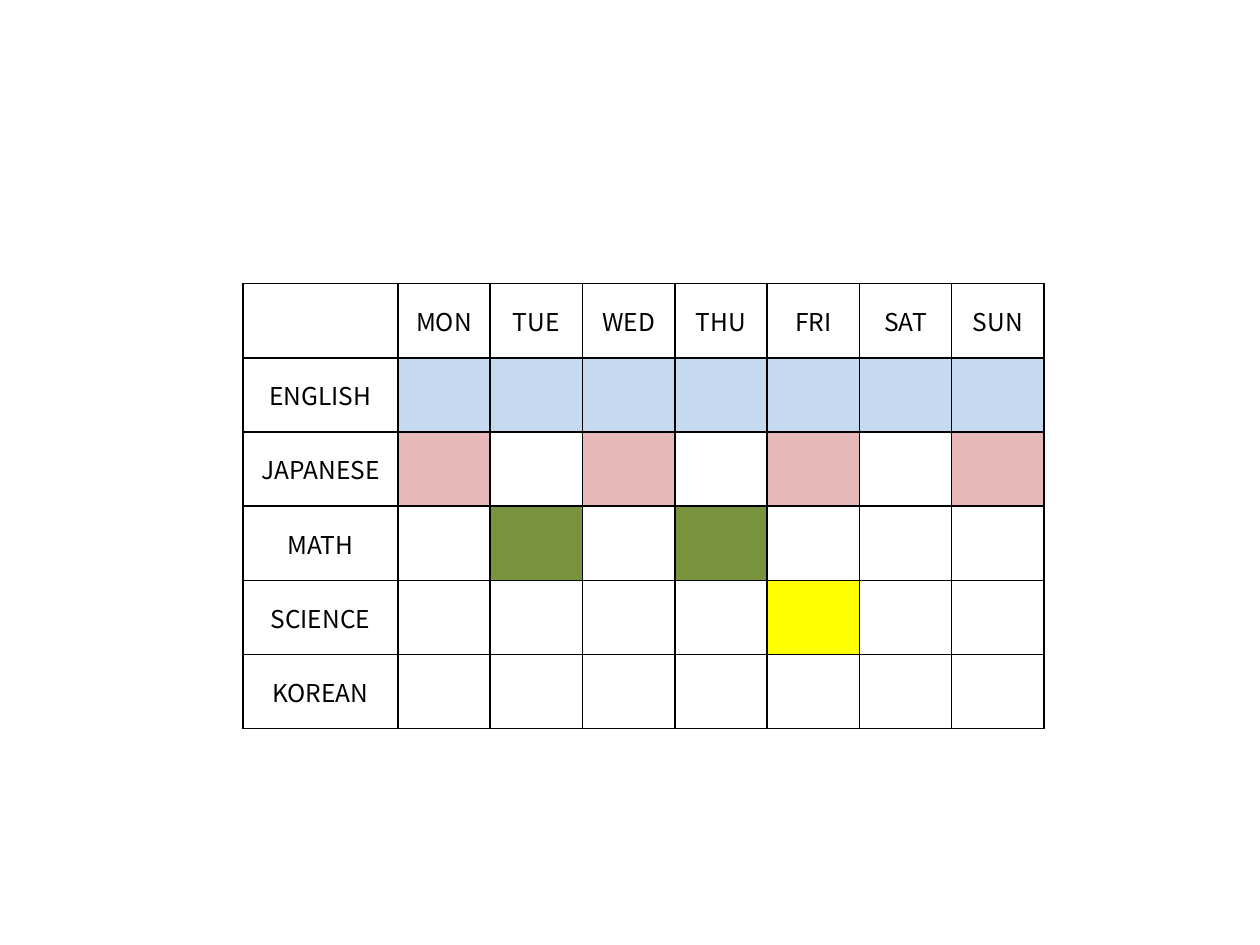
from dataclasses import dataclass

from lxml.etree import SubElement
from pptx import Presentation
from pptx.dml.color import RGBColor
from pptx.enum.text import MSO_ANCHOR, PP_ALIGN
from pptx.oxml.ns import qn
from pptx.util import Cm, Pt


@dataclass(frozen=True)
class Theme:
    """Colours, font and sizes of the timetable."""

    ink: str = "000000"
    english: str = "C6D9F1"
    japanese: str = "E6B9B8"
    math: str = "77933C"
    science: str = "FFFF00"
    font: str = "Noto Sans CJK KR"
    label_size: int = 14
    border_width: int = 1


THEME = Theme()
DAYS = ["MON", "TUE", "WED", "THU", "FRI", "SAT", "SUN"]
LESSONS = {
    "ENGLISH": (THEME.english, DAYS),
    "JAPANESE": (THEME.japanese, ["MON", "WED", "FRI", "SUN"]),
    "MATH": (THEME.math, ["TUE", "THU"]),
    "SCIENCE": (THEME.science, ["FRI"]),
    "KOREAN": (None, []),
}
TABLE_FORMAT = {"first_row": False, "horz_banding": False}
LABEL_FORMAT = {"name": THEME.font, "size": Pt(THEME.label_size), "bold": False}


def apply_format(target, values):
    """Set each attribute of the target from a dict of values."""
    for attribute, value in values.items():
        setattr(target, attribute, value)


def add_borders(cell):
    """Draw a solid line on all four sides of a cell."""
    properties = cell._tc.get_or_add_tcPr()
    for position, side in enumerate(("a:lnL", "a:lnR", "a:lnT", "a:lnB")):
        line = SubElement(properties, qn(side), w=str(Pt(THEME.border_width)))
        properties.insert(position, line)
        ink = SubElement(SubElement(line, qn("a:solidFill")), qn("a:srgbClr"))
        ink.set("val", THEME.ink)


def format_cell(cell, label="", color=None):
    """Give a cell its label, fill and borders."""
    cell.text = label
    cell.vertical_anchor = MSO_ANCHOR.MIDDLE
    paragraph = cell.text_frame.paragraphs[0]
    paragraph.alignment = PP_ALIGN.CENTER
    apply_format(paragraph.font, LABEL_FORMAT)
    for run in paragraph.runs:
        apply_format(run.font, LABEL_FORMAT)
        run.font.color.rgb = RGBColor.from_string(THEME.ink)
    if color:
        cell.fill.solid()
        cell.fill.fore_color.rgb = RGBColor.from_string(color)
    else:
        cell.fill.background()
    add_borders(cell)


def add_timetable(slide, left, top, width, height, subject_width):
    """Place the weekly timetable in the given box."""
    timetable = slide.shapes.add_table(
        len(LESSONS) + 1, len(DAYS) + 1, left, top, width, height
    ).table
    apply_format(timetable, TABLE_FORMAT)
    subject_column, *day_columns = timetable.columns
    subject_column.width = subject_width
    for day_column in day_columns:
        day_column.width = (width - subject_width) // len(DAYS)

    for column, day in enumerate(["", *DAYS]):
        format_cell(timetable.cell(0, column), day)
    for row, (subject, (color, lesson_days)) in enumerate(LESSONS.items(), 1):
        format_cell(timetable.cell(row, 0), subject)
        for column, day in enumerate(DAYS, 1):
            fill = color if day in lesson_days else None
            format_cell(timetable.cell(row, column), color=fill)


def main():
    """Build and save the timetable slide."""
    presentation = Presentation()
    apply_format(presentation, {"slide_width": Cm(25.4), "slide_height": Cm(19.05)})
    slide = presentation.slides.add_slide(presentation.slide_layouts[6])
    add_timetable(slide, Cm(4.9), Cm(5.72), Cm(16.15), Cm(8.97), subject_width=Cm(3.12))
    presentation.save("out.pptx")


if __name__ == "__main__":
    main()
